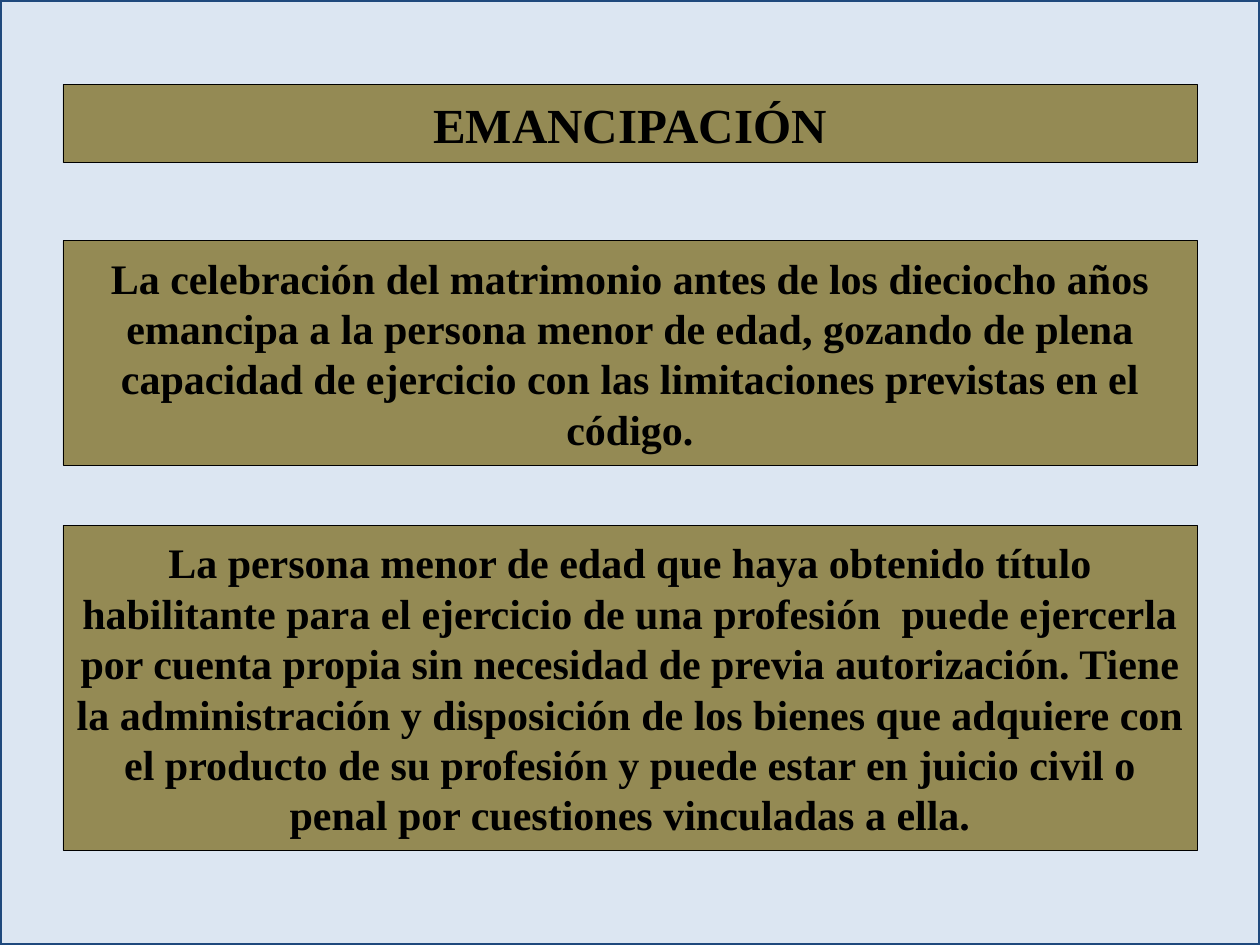
from dataclasses import dataclass

from pptx import Presentation
from pptx.dml.color import RGBColor
from pptx.enum.shapes import MSO_SHAPE
from pptx.enum.text import MSO_ANCHOR, PP_ALIGN
from pptx.shapes.autoshape import Shape
from pptx.slide import Slide
from pptx.util import Inches, Pt


@dataclass
class Panel:
    top: float
    height: float
    size: int
    text: str


PANELS = [
    Panel(0.67, 0.62, 28, "EMANCIPACIÓN"),
    Panel(1.91, 1.78, 24,
          "La celebración del matrimonio antes de los dieciocho años emancipa a la "
          "persona menor de edad, gozando de plena capacidad de ejercicio con las "
          "limitaciones previstas en el código."),
    Panel(4.17, 2.58, 24,
          "La persona menor de edad que haya obtenido título habilitante para el "
          "ejercicio de una profesión  puede ejercerla por cuenta propia sin necesidad "
          "de previa autorización. Tiene la administración y disposición de los bienes "
          "que adquiere con el producto de su profesión y puede estar en juicio civil o "
          "penal por cuestiones vinculadas a ella."),
]


def color(value: str) -> RGBColor:
    return RGBColor.from_string(value)


def add_rect(s: Slide, left: float, top: float, width: float, height: float,
             fill: str, line: str, weight: float) -> Shape:
    sp = s.shapes.add_shape(MSO_SHAPE.RECTANGLE, Inches(left), Inches(top),
                            Inches(width), Inches(height))
    sp.shadow.inherit = False
    sp.fill.solid()
    sp.fill.fore_color.rgb = color(fill)
    sp.line.color.rgb = color(line)
    sp.line.width = Pt(weight)
    return sp


def set_text(sp: Shape, text: str, *, size: int, font: str = "Times New Roman",
             fill: str = "000000", bold: bool = True) -> None:
    tf = sp.text_frame
    tf.word_wrap = True
    tf.vertical_anchor = MSO_ANCHOR.MIDDLE
    p = tf.paragraphs[0]
    p.alignment = PP_ALIGN.CENTER
    r = p.add_run()
    r.text = text
    r.font.name = font
    r.font.size = Pt(size)
    r.font.bold = bold
    r.font.color.rgb = color(fill)


def add_panel(s: Slide, panel: Panel) -> None:
    sp = add_rect(s, 0.5, panel.top, 9, panel.height, "948A54", "000000", 0.25)
    set_text(sp, panel.text, size=panel.size)


def main() -> None:
    prs = Presentation()
    prs.slide_width = Inches(10)
    prs.slide_height = Inches(7.5)
    s = prs.slides.add_slide(prs.slide_layouts[6])
    add_rect(s, 0, 0, 10, 7.5, "DCE6F2", "1F497D", 2)
    for panel in PANELS:
        add_panel(s, panel)
    prs.save("out.pptx")


if __name__ == "__main__":
    main()
